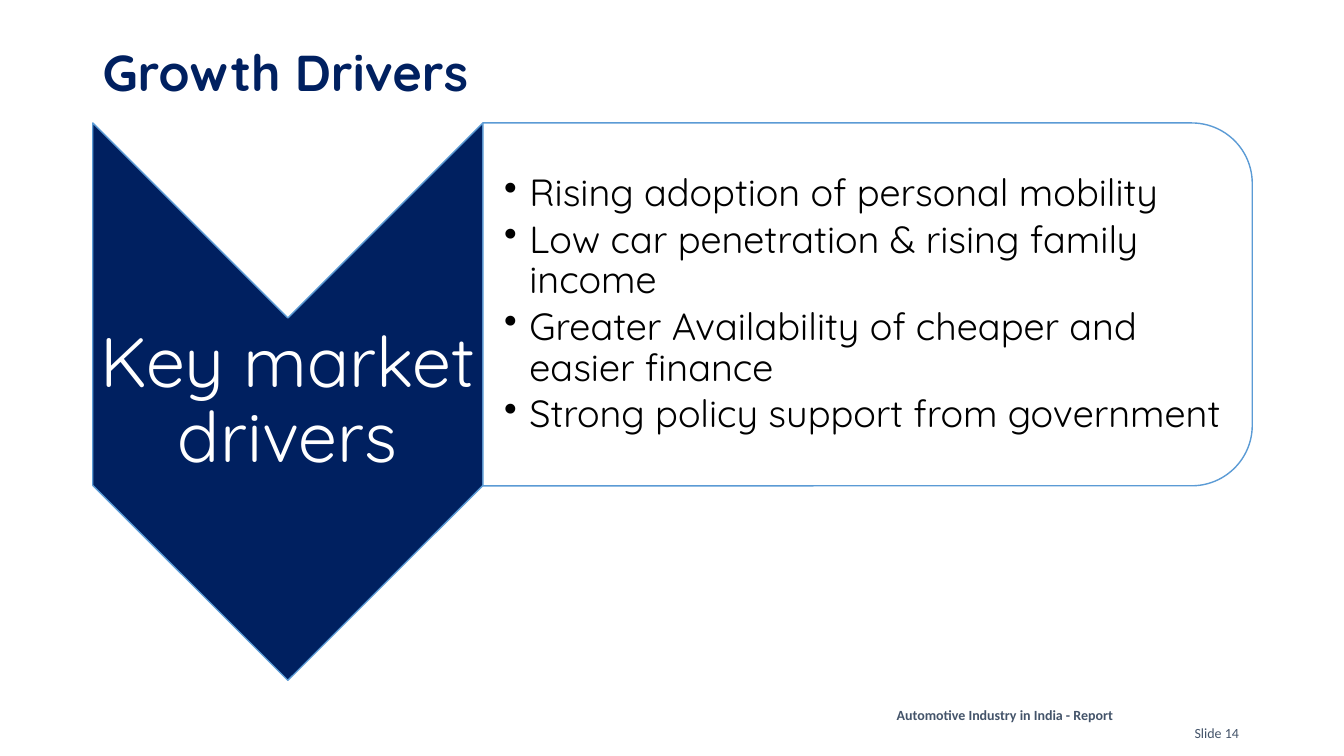
import pptx
import pptx.util
import pptx.dml.color
import pptx.enum.shapes
import pptx.enum.text
import pptx.oxml
import pptx.oxml.ns
from lxml import etree

Inches = pptx.util.Inches
Pt = pptx.util.Pt
SHAPE = pptx.enum.shapes.MSO_SHAPE
ALIGN = pptx.enum.text.PP_ALIGN
ANCHOR = pptx.enum.text.MSO_ANCHOR
qn = pptx.oxml.ns.qn

NAVY, BLUE, SLATE, WHITE, BLACK = "002060", "5B9BD5", "44546A", "FFFFFF", "000000"


def rgb(value):
    return pptx.dml.color.RGBColor.from_string(value)


def apply(target, values):
    for name, value in values.items():
        setattr(target, name, value)


class SlideBuilder:
    heading_font = "Quicksand"
    footer_font = "Calibri"

    def __init__(self, prs):
        self.s = prs.slides.add_slide(prs.slide_layouts[6])

    def text(self, box, lines, size, color, font=None, bold=False, bullet=False,
             insets=(0.1, 0.05, 0.1, 0.05), frame=None, para=None):
        sp = self.s.shapes.add_textbox(*map(Inches, box))
        tf = sp.text_frame
        sides = ("margin_left", "margin_top", "margin_right", "margin_bottom")
        apply(tf, dict(zip(sides, map(Inches, insets))))
        apply(tf, {"word_wrap": True, **(frame or {})})
        for i, line in enumerate(lines):
            p = tf.paragraphs[0] if i == 0 else tf.add_paragraph()
            apply(p, para or {})
            if bullet:
                self.bullet(p)
            r = p.add_run()
            r.text = line
            apply(r.font, {"name": font or self.heading_font, "size": Pt(size), "bold": bold})
            r.font.color.rgb = rgb(color)

    def bullet(self, p):
        pPr = p._p.get_or_add_pPr()
        pPr.set("marL", str(Inches(0.25)))
        pPr.set("indent", str(Inches(-0.25)))
        etree.SubElement(pPr, qn("a:buChar")).set("char", "•")

    def turned_shape(self, kind, box, fill, opacity=100):
        left, top, width, height = box
        x = left + (width - height) / 2
        y = top + (height - width) / 2
        sp = self.s.shapes.add_shape(kind, *map(Inches, (x, y, height, width)))
        sp.rotation = 90
        sp.shadow.inherit = False
        sp.fill.solid()
        sp.fill.fore_color.rgb = rgb(fill)
        if opacity < 100:
            clr = sp.fill._xPr.find(qn("a:solidFill"))[0]
            etree.SubElement(clr, qn("a:alpha")).set("val", str(opacity * 1000))
        sp.line.color.rgb = rgb(BLUE)
        sp.line.width = Pt(1)
        return sp


def main():
    prs = pptx.Presentation()
    prs.slide_width, prs.slide_height = Inches(13.33), Inches(7.5)
    b = SlideBuilder(prs)
    middle = {"vertical_anchor": ANCHOR.MIDDLE}

    b.text((7.84, 6.96, 4.25, 0.27), ["Automotive Industry in India - Report"], 10, SLATE,
           font=b.footer_font, bold=True, para={"alignment": ALIGN.CENTER})
    b.text((11.75, 7.14, 0.66, 0.27), ["Slide 14"], 10, SLATE,
           font=b.footer_font, frame={"word_wrap": False})
    b.text((0.92, 0.4, 11.5, 0.69), ["Growth Drivers"], 36, NAVY, bold=True,
           frame=middle, para={"line_spacing": 0.9})

    chevron = b.turned_shape(SHAPE.CHEVRON, (0.92, 1.22, 3.87, 5.53), NAVY)
    chevron.adjustments[0] = 0.5
    b.text((0.92, 3.16, 3.87, 1.66), ["Key market drivers"], 50, WHITE,
           insets=(0.03,) * 4, frame=middle,
           para={"alignment": ALIGN.CENTER, "line_spacing": 0.9})

    b.turned_shape(SHAPE.ROUND_2_SAME_RECTANGLE, (4.79, 1.22, 7.63, 3.6), WHITE, opacity=90)
    drivers = [
        "Rising adoption of personal mobility",
        "Low car penetration & rising family income",
        "Greater Availability of cheaper and easier finance",
        "Strong policy support from government",
    ]
    b.text((4.79, 1.4, 7.45, 3.25), drivers, 27, BLACK, bullet=True,
           insets=(0.21, 0.02, 0.02, 0.02), frame=middle,
           para={"level": 1, "line_spacing": 0.9, "space_after": Pt(4)})

    prs.save("out.pptx")


if __name__ == "__main__":
    main()
